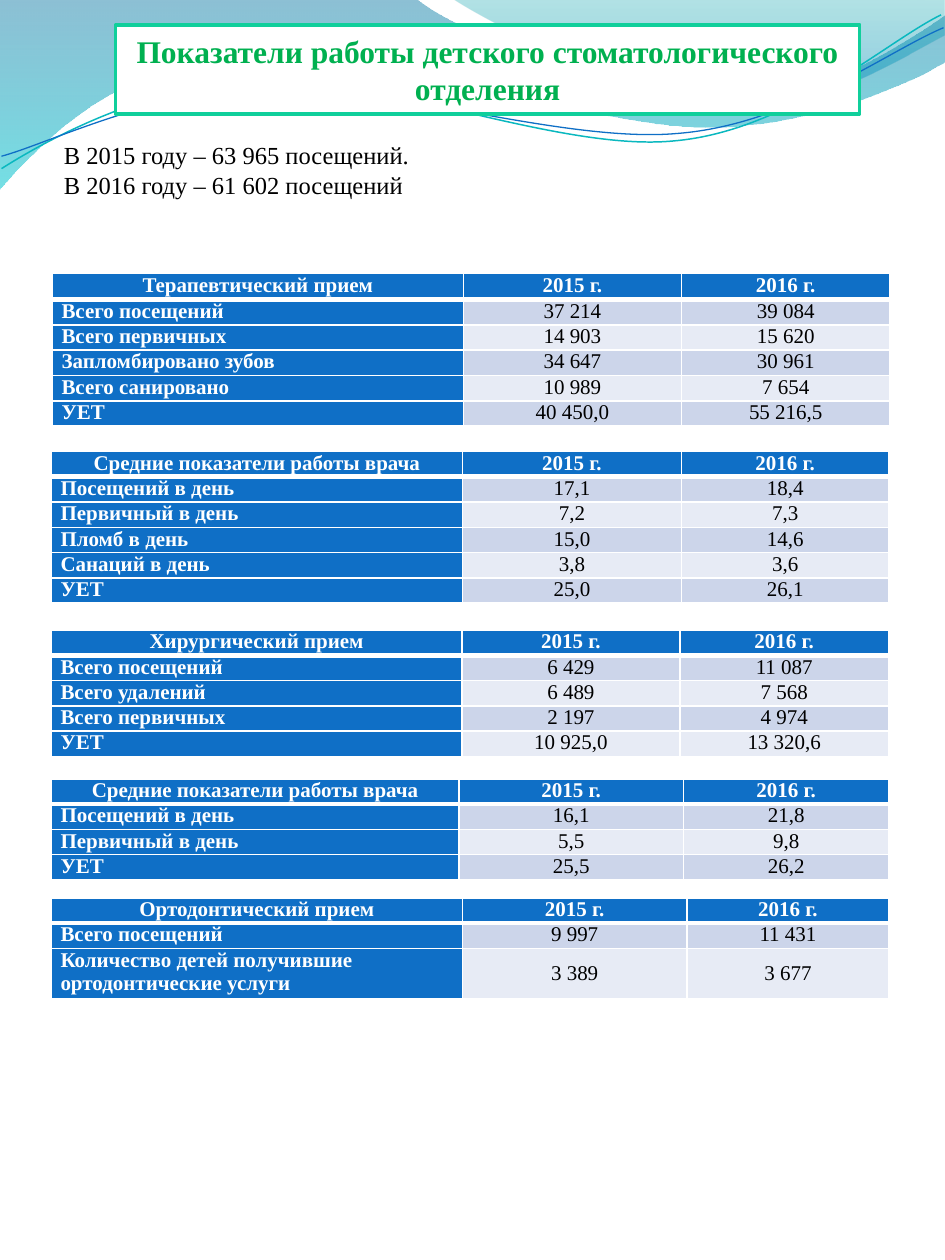
from math import cos, radians, sin

from lxml import etree
from pptx import Presentation
from pptx.dml.color import RGBColor
from pptx.enum.text import MSO_ANCHOR, MSO_AUTO_SIZE, PP_ALIGN
from pptx.oxml.ns import qn
from pptx.util import Cm, Pt

CENTER, LEFT = PP_ALIGN.CENTER, PP_ALIGN.LEFT
TOP, MIDDLE = MSO_ANCHOR.TOP, MSO_ANCHOR.MIDDLE
NO_FIT = MSO_AUTO_SIZE.NONE
FONT = "Times New Roman"
BLUE, WHITE, BLACK = "0F6FC6", "FFFFFF", "000000"
BANDS = ["CCD5EA", "E7EBF5"]
TILT = 2.7


def rgb(value):
    return RGBColor.from_string(value)


def write(p, text, size, color, bold=False, align=LEFT):
    p.alignment = align
    r = p.add_run()
    r.text = text
    r.font.color.rgb = rgb(color)
    for name, value in {"name": FONT, "size": Pt(size), "bold": bold}.items():
        setattr(r.font, name, value)


prs = Presentation()
prs.slide_width, prs.slide_height = Cm(19.05), Cm(25.4)
s = prs.slides.add_slide(prs.slide_layouts[5])
title = s.shapes.title

# Waves behind the title: a two-number segment is a line, six numbers a Bezier curve.
# Gradient stops are (position, colour, opacity in percent); tilted lines turn about a centre.
waves = [
    {"path": [(0, -0.03), (8.38, -0.03), (9.07, 0.56, 12.65, 2.13, 14.45, 2.13),
              (16.26, 2.13, 18.26, 0.86, 19.05, 0.3), (19.08, 1.22),
              (18.75, 1.47, 16.56, 2.57, 14.2, 2.57), (11.84, 2.54, 7.26, 0.94, 4.9, 1.14),
              (2.46, 1.19, 0.86, 2.82, -0.03, 3.84), (0, -0.03)],
     "stops": [(0, "0074A1", 45), (1, "00C6CF", 55)]},
    {"path": [(9.12, -0.03), (9.7, 0.38, 12.98, 2.08, 14.66, 2.21),
              (16.31, 2.34, 18.31, 1.09, 19.05, 0.71), (19.05, 0), (9.12, -0.03)],
     "stops": [(0, "00A1A9", 30), (0.8, "008BBF", 45)]},
    {"path": [(0.03, 3.4), (0.91, 2.84, 3, 1.68, 5.26, 1.6),
              (7.52, 1.5, 11.3, 3.07, 13.59, 2.84), (15.9, 2.64, 17.86, 0.84, 18.97, 0.3)],
     "line": ("0AB8BF", 0.85), "centre": (9.5, 1.97)},
    {"path": [(0.03, 3.15), (0.91, 2.92, 3.1, 1.83, 5.38, 1.75),
              (7.67, 1.68, 11.4, 2.9, 13.67, 2.69), (15.95, 2.51, 17.91, 1.02, 19.02, 0.56)],
     "line": (BLUE, 0.75), "centre": (9.54, 1.99)},
]
for wave in waves:
    points = [seg[k:k + 2] for seg in wave["path"] for k in range(0, len(seg), 2)]
    if "centre" in wave:
        cx, cy = wave["centre"]
        c, d = cos(radians(TILT)), sin(radians(TILT))
        points = [(cx + (x - cx) * c - (y - cy) * d, cy + (x - cx) * d + (y - cy) * c)
                  for x, y in points]
    points = [(Cm(x), Cm(y)) for x, y in points]
    builder = s.shapes.build_freeform(*points[0])
    builder.add_line_segments(points[1:], close="stops" in wave)
    sp = builder.convert_to_shape()
    sp.shadow.inherit = False

    # Join each run of three points into one curve
    lines = iter(list(sp._element.iter(qn("a:lnTo"))))
    for seg in wave["path"][1:]:
        nodes = [next(lines) for _ in range(len(seg) // 2)]
        if len(nodes) == 3:
            curve = etree.Element(qn("a:cubicBezTo"))
            nodes[0].addprevious(curve)
            for node in nodes:
                curve.append(node[0])
                node.getparent().remove(node)

    if "stops" in wave:
        sp.line.fill.background()
        sp.fill.gradient()
        sp.fill.gradient_angle = 270
        for stop, (position, color, _) in zip(sp.fill.gradient_stops, wave["stops"]):
            stop.position = position
            stop.color.rgb = rgb(color)
        for clr, (_, _, opacity) in zip(sp._element.iter(qn("a:srgbClr")), wave["stops"]):
            etree.SubElement(clr, qn("a:alpha"), val=str(opacity * 1000))
    else:
        color, width = wave["line"]
        sp.rotation = 360 - TILT
        sp.fill.background()
        sp.line.color.rgb = rgb(color)
        sp.line.width = Pt(width)
    title._element.addprevious(sp._element)

# Title
title.left, title.top, title.width, title.height = Cm(2.33), Cm(0.5), Cm(15), Cm(1.8)
title.fill.solid()
title.fill.fore_color.rgb = rgb(WHITE)
title.line.color.rgb = rgb("10CF9B")
title.line.width = Pt(2)
tf = title.text_frame
tf.word_wrap, tf.auto_size, tf.vertical_anchor = True, NO_FIT, MIDDLE
write(tf.paragraphs[0], "Показатели работы детского стоматологического отделения",
      18, "00B050", True, CENTER)

# Yearly visits
tf = s.shapes.add_textbox(Cm(1.04), Cm(2.7), Cm(9.53), Cm(1.45)).text_frame
tf.word_wrap = True
write(tf.paragraphs[0], "В 2015 году – 63 965 посещений.", 14, BLACK)
write(tf.add_paragraph(), "В 2016 году – 61 602 посещений", 14, BLACK)

# Tables: left, top, column widths, heading, rows
tables = [
    (1.06, 5.51, (8.28, 4.4, 4.2), "Терапевтический прием", [
        ("Всего посещений", "37 214", "39 084"),
        ("Всего первичных", "14 903", "15 620"),
        ("Запломбировано зубов", "34 647", "30 961"),
        ("Всего санировано", "10 989", "7 654"),
        ("УЕТ", "40 450,0", "55 216,5")]),
    (1.04, 9.1, (8.28, 4.42, 4.18), "Средние показатели работы врача", [
        ("Посещений в день", "17,1", "18,4"),
        ("Первичный в день", "7,2", "7,3"),
        ("Пломб в день", "15,0", "14,6"),
        ("Санаций в день", "3,8", "3,6"),
        ("УЕТ", "25,0", "26,1")]),
    (1.04, 12.7, (8.27, 4.4, 4.2), "Хирургический прием", [
        ("Всего посещений", "6 429", "11 087"),
        ("Всего удалений", "6 489", "7 568"),
        ("Всего первичных", "2 197", "4 974"),
        ("УЕТ", "10 925,0", "13 320,6")]),
    (1.04, 15.7, (8.21, 4.53, 4.14), "Средние показатели работы врача", [
        ("Посещений в день", "16,1", "21,8"),
        ("Первичный в день", "5,5", "9,8"),
        ("УЕТ", "25,5", "26,2")]),
    (1.04, 18.1, (8.28, 4.53, 4.07), "Ортодонтический прием", [
        ("Всего посещений", "9 997", "11 431"),
        ("Количество детей получившие ортодонтические услуги", "3 389", "3 677")]),
]
for left, top, widths, heading, body in tables:
    rows = [(heading, "2015 г.", "2016 г."), *body]
    heights = [1.01 if len(row[0]) > 40 else 0.51 for row in rows]
    if heading == "Терапевтический прием":
        heights[0] = 0.53
    tbl = s.shapes.add_table(len(rows), 3, Cm(left), Cm(top),
                             Cm(sum(widths)), Cm(sum(heights))).table
    for col, width in zip(tbl.columns, widths):
        col.width = Cm(width)
    for i, row in enumerate(rows):
        tbl.rows[i].height = Cm(heights[i])
        for j, text in enumerate(row):
            cell = tbl.cell(i, j)
            strong = i == 0 or j == 0
            tall = heights[i] > 1 and j > 0
            cell.fill.solid()
            cell.fill.fore_color.rgb = rgb(BLUE if strong else BANDS[(i - 1) % 2])
            for name, value in {"margin_left": Cm(0.18), "margin_right": Cm(0.18),
                                "margin_top": 0, "margin_bottom": 0,
                                "vertical_anchor": MIDDLE if tall else TOP}.items():
                setattr(cell, name, value)
            write(cell.text_frame.paragraphs[0], text, 12, WHITE if strong else BLACK,
                  strong, LEFT if i and not j else CENTER)
            # White borders, thicker under the heading row
            for k, side in enumerate("LRTB"):
                thick = (i, side) in ((0, "B"), (1, "T"))
                ln = etree.Element(qn("a:ln" + side), w=str(Pt(3 if thick else 1)))
                fill = etree.SubElement(ln, qn("a:solidFill"))
                etree.SubElement(fill, qn("a:srgbClr"), val=WHITE)
                cell._tc.tcPr.insert(k, ln)

prs.save("out.pptx")
